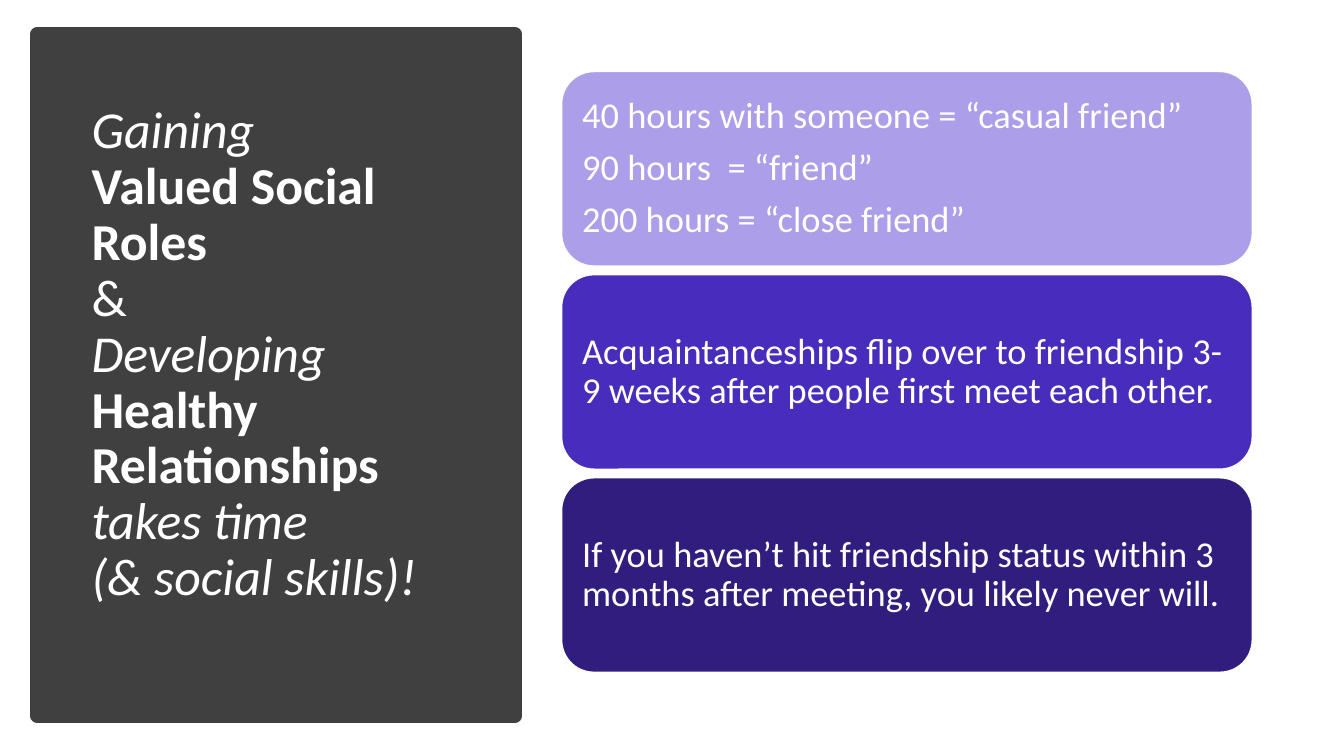
from pptx import Presentation
from pptx.dml.color import RGBColor as Rgb
from pptx.enum.shapes import MSO_SHAPE as Kind
from pptx.enum.text import MSO_ANCHOR as Anchor
from pptx.util import Inches, Pt

TITLE = [
    ("Gaining", "italic"),
    ("Valued Social Roles", "bold"),
    ("&", "plain"),
    ("Developing", "italic"),
    ("Healthy Relationships", "bold"),
    ("takes time", "italic"),
    ("(& social skills)!", "italic"),
]
CARDS = [
    ("light", [
        "40 hours with someone = “casual friend”",
        "90 hours  = “friend”",
        "200 hours = “close friend”",
    ]),
    ("mid", ["Acquaintanceships flip over to friendship 3-9 weeks after people first meet each other."]),
    ("dark", ["If you haven’t hit friendship status within 3 months after meeting, you likely never will."]),
]
THEME = {
    "font": "Calibri",
    "title": 37,
    "body": 26,
    "white": "FFFFFF",
    "panel": "404040",
    "light": "AC9EE8",
    "mid": "482CBC",
    "dark": "301D7E",
}
PANEL = (0.37, 0.34, 4.74, 6.76)
HEAD = (0.81, 0.81, 3.8, 5.43)
LEFT, TOP, WIDTH, HEIGHT, GAP = 5.57, 0.71, 6.85, 1.93, 0.085
INSET = 0.11


def tint(name):
    return Rgb.from_string(THEME[name])


def block(slide, kind, box, fill, edge, weight):
    shape = slide.shapes.add_shape(kind, *map(Inches, box))
    shape.shadow.inherit = False
    shape.fill.solid()
    shape.fill.fore_color.rgb = tint(fill)
    shape.line.color.rgb = tint(edge)
    shape.line.width = Pt(weight)
    return shape


def setup(frame):
    frame.word_wrap = True
    frame.vertical_anchor = Anchor.MIDDLE


def style(para, size):
    para.alignment = 1
    para.line_spacing = 0.9
    para.font.name = THEME["font"]
    para.font.size = Pt(THEME[size])
    para.font.color.rgb = tint("white")


def heading(slide):
    frame = slide.shapes.add_textbox(*map(Inches, HEAD)).text_frame
    setup(frame)
    para = frame.paragraphs[0]
    style(para, "title")
    for i, (text, look) in enumerate(TITLE):
        if i:
            para.add_line_break()
        run = para.add_run()
        run.text = text
        run.font.bold = look == "bold"
        run.font.italic = look == "italic"


def card(slide, row, fill, lines):
    top = TOP + row * (HEIGHT + GAP)
    shape = block(slide, Kind.ROUNDED_RECTANGLE, (LEFT, top, WIDTH, HEIGHT), fill, "white", 1)
    frame = shape.text_frame
    setup(frame)
    frame.margin_left = frame.margin_right = Inches(INSET)
    frame.margin_top = frame.margin_bottom = Inches(INSET)
    for i, text in enumerate(lines):
        para = frame.add_paragraph() if i else frame.paragraphs[0]
        para.text = text
        style(para, "body")
        para.space_after = Pt(9)


def main():
    deck = Presentation()
    deck.slide_width, deck.slide_height = Inches(13.33), Inches(7.5)
    slide = deck.slides.add_slide(deck.slide_layouts[6])
    block(slide, Kind.RECTANGLE, PANEL, "panel", "panel", 10)
    heading(slide)
    for row, (fill, lines) in enumerate(CARDS):
        card(slide, row, fill, lines)
    deck.save("out.pptx")


if __name__ == "__main__":
    main()
